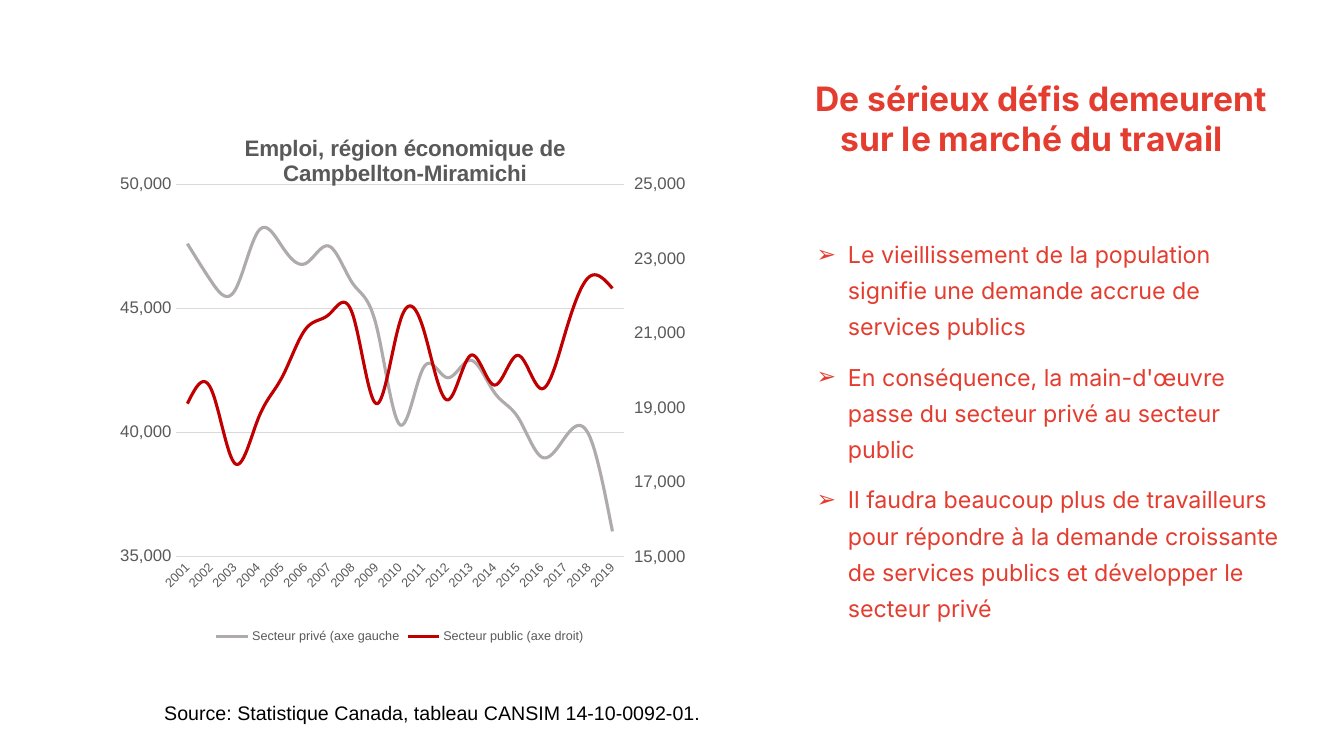
import copy
import dataclasses

import lxml.etree
import pptx
import pptx.chart.axis
import pptx.chart.data
import pptx.dml.color
import pptx.enum.chart
import pptx.enum.text
import pptx.oxml
import pptx.oxml.ns
import pptx.util

Cm = pptx.util.Cm
qn = pptx.oxml.ns.qn

YEARS = [str(year) for year in range(2001, 2020)]
EMPLOYMENT = {
    "Secteur privé (axe gauche": [
        47600, 46100, 45700, 48100, 47500, 46800, 47500, 46000, 44300, 40300,
        42600, 42200, 42900, 41600, 40600, 39000, 39800, 39900, 36000],
    "Secteur public (axe droit)": [
        19100, 19500, 17500, 18700, 19800, 21100, 21500, 21500, 19100, 21300,
        21100, 19200, 20400, 19600, 20400, 19500, 21000, 22500, 22200],
}
CHALLENGES = [
    "Le vieillissement de la population signifie une demande accrue de services publics",
    "En conséquence, la main-d'œuvre passe du secteur privé au secteur public",
    "Il faudra beaucoup plus de travailleurs pour répondre à la demande "
    "croissante de services publics et développer le secteur privé",
]


@dataclasses.dataclass(frozen=True)
class Theme:
    accent: str = "E43D30"
    ink: str = "000000"
    chart_text: str = "595959"
    grid: str = "D9D9D9"
    series: tuple = ("AFABAB", "C00000")
    text_font: str = "Inter"
    chart_font: str = "Arial"
    heading: float = 24
    body: float = 16.6
    chart_title: float = 16
    source: float = 14
    axis: float = 12
    small: float = 9


def rgb(value):
    return pptx.dml.color.RGBColor.from_string(value)


def style_font(font, size, color, name, bold=False):
    font.size = pptx.util.Pt(size)
    font.color.rgb = rgb(color)
    font.name = name
    font.bold = bold


def write_text(paragraph, text, *, size, color, font, bold=False, margin=0,
               hanging=0, bullet=None, before=0, spacing=None):
    paragraph.alignment = pptx.enum.text.PP_ALIGN.LEFT
    paragraph.space_before = pptx.util.Pt(before)
    if spacing:
        paragraph.line_spacing = spacing
    properties = paragraph._p.get_or_add_pPr()
    properties.set("marL", str(Cm(margin)))
    properties.set("indent", str(-Cm(hanging)))
    if bullet:
        bullet_color = lxml.etree.SubElement(properties, qn("a:buClr"))
        lxml.etree.SubElement(bullet_color, qn("a:srgbClr")).set("val", color)
        lxml.etree.SubElement(properties, qn("a:buFont")).set("typeface", "Arial")
        lxml.etree.SubElement(properties, qn("a:buChar")).set("char", bullet)
    run = paragraph.add_run()
    run.text = text
    style_font(run.font, size, color, font, bold)


def set_layout(parent, index, **places):
    for old in parent.findall(qn("c:layout")):
        parent.remove(old)
    layout = parent.makeelement(qn("c:layout"))
    manual = lxml.etree.SubElement(layout, qn("c:manualLayout"))
    for tag, value in places.items():
        lxml.etree.SubElement(manual, qn("c:" + tag)).set("val", str(value))
    parent.insert(index, layout)


class EmploymentSlide:
    def __init__(self, deck, theme):
        self.theme = theme
        self.slide = deck.slides.add_slide(deck.slide_layouts[5])

    def prepare_frame(self, shape, fit=pptx.enum.text.MSO_AUTO_SIZE.NONE):
        frame = shape.text_frame
        frame.word_wrap = True
        frame.auto_size = fit
        frame.vertical_anchor = pptx.enum.text.MSO_ANCHOR.TOP
        return frame

    def heading(self, text, left, top, width, height):
        title = self.slide.shapes.title
        title.left, title.top, title.width, title.height = map(Cm, (left, top, width, height))
        write_text(self.prepare_frame(title).paragraphs[0], text, bold=True,
                   size=self.theme.heading, color=self.theme.accent,
                   font=self.theme.text_font, margin=1.27, hanging=0.64)

    def bullets(self, points, left, top, width, height):
        box = self.slide.shapes.add_textbox(*map(Cm, (left, top, width, height)))
        frame = self.prepare_frame(box)
        for position, point in enumerate(points):
            paragraph = frame.add_paragraph() if position else frame.paragraphs[0]
            write_text(paragraph, point, size=self.theme.body,
                       color=self.theme.accent, font=self.theme.text_font,
                       margin=1.43, hanging=0.79, bullet="➢",
                       before=10 if position else 0, spacing=1.3)

    def source(self, text, left, top, width, height):
        box = self.slide.shapes.add_textbox(*map(Cm, (left, top, width, height)))
        frame = self.prepare_frame(box, pptx.enum.text.MSO_AUTO_SIZE.SHAPE_TO_FIT_TEXT)
        write_text(frame.paragraphs[0], text, size=self.theme.source,
                   color=self.theme.ink, font=self.theme.chart_font)

    def chart(self, title, years, employment, left, top, width, height):
        theme = self.theme
        data = pptx.chart.data.CategoryChartData(number_format="#,##0")
        data.categories = years
        for name, values in employment.items():
            data.add_series(name, values)
        chart = self.slide.shapes.add_chart(
            pptx.enum.chart.XL_CHART_TYPE.LINE,
            *map(Cm, (left, top, width, height)), data).chart
        style_font(chart.font, 10, theme.ink, theme.chart_font)

        chart.has_title = True
        write_text(chart.chart_title.text_frame.paragraphs[0], title, bold=True,
                   size=theme.chart_title, color=theme.chart_text, font=theme.chart_font)
        chart.chart_title.text_frame.paragraphs[0].alignment = pptx.enum.text.PP_ALIGN.CENTER
        set_layout(chart.chart_title._element, 1, xMode="edge", yMode="edge", x=0.23, y=0.04)
        chart.has_legend = True
        chart.legend.position = pptx.enum.chart.XL_LEGEND_POSITION.BOTTOM
        chart.legend.include_in_layout = False
        style_font(chart.legend.font, theme.small, theme.chart_text, theme.chart_font)

        for series, color in zip(chart.plots[0].series, theme.series):
            series.smooth = True
            series.marker.style = pptx.enum.chart.XL_MARKER_STYLE.NONE
            series.format.line.color.rgb = rgb(color)
            series.format.line.width = pptx.util.Pt(2.25)
        chart.plots[0].vary_by_categories = False
        self.axes(chart)
        self.right_axis(chart)
        set_layout(chart._chartSpace.chart.plotArea, 0, layoutTarget="inner",
                   xMode="edge", yMode="edge", x=0.12, y=0.14, w=0.76, h=0.69)

    def axes(self, chart):
        theme = self.theme
        year_axis, left_axis = chart.category_axis, chart.value_axis
        for axis, size in ((year_axis, theme.small), (left_axis, theme.axis)):
            axis.major_tick_mark = pptx.enum.chart.XL_TICK_MARK.NONE
            style_font(axis.tick_labels.font, size, theme.chart_text, theme.chart_font)
        year_axis._element.find(qn("c:txPr")).find(qn("a:bodyPr")).set("rot", "-2700000")
        left_axis.tick_labels.number_format = "#,##0"
        left_axis.tick_labels.number_format_is_linked = False
        left_axis.format.line.fill.background()
        self.scale(left_axis, 35000, 50000, 5000)
        left_axis.has_major_gridlines = True
        for line in (year_axis.format.line, left_axis.major_gridlines.format.line):
            line.color.rgb = rgb(theme.grid)
            line.width = pptx.util.Pt(0.75)

    def scale(self, axis, low, high, step):
        axis.minimum_scale, axis.maximum_scale, axis.major_unit = low, high, step

    def right_axis(self, chart):
        left_plot = chart.plots[0]._element
        right_plot = copy.deepcopy(left_plot)
        left_plot.remove(left_plot.findall(qn("c:ser"))[1])
        right_plot.remove(right_plot.findall(qn("c:ser"))[0])
        left_plot.addnext(right_plot)

        left_values = chart.value_axis._element
        right_values = copy.deepcopy(left_values)
        right_years = copy.deepcopy(chart.category_axis._element)
        left_values.addnext(right_values)
        right_values.addnext(right_years)
        year_id, value_id = "50010", "50020"
        for reference, number in zip(right_plot.findall(qn("c:axId")), (year_id, value_id)):
            reference.set("val", number)
        for element, own, other in ((right_years, year_id, value_id),
                                    (right_values, value_id, year_id)):
            element.find(qn("c:axId")).set("val", own)
            element.find(qn("c:crossAx")).set("val", other)
        right_values.find(qn("c:axPos")).set("val", "r")
        right_values.find(qn("c:crosses")).set("val", "max")
        pptx.chart.axis.CategoryAxis(right_years).visible = False
        axis = pptx.chart.axis.ValueAxis(right_values)
        axis.has_major_gridlines = False
        axis.major_tick_mark = pptx.enum.chart.XL_TICK_MARK.OUTSIDE
        self.scale(axis, 15000, 25000, 2000)


def main():
    deck = pptx.Presentation()
    deck.slide_width, deck.slide_height = Cm(33.87), Cm(19.05)
    page = EmploymentSlide(deck, Theme())
    page.heading("De sérieux défis demeurent sur le marché du travail", 19.66, 1.83, 12.93, 3.3)
    page.bullets(CHALLENGES, 19.69, 5.72, 12.93, 11)
    page.chart("Emploi, région économique de Campbellton-Miramichi", YEARS, EMPLOYMENT,
               2.64, 2.74, 14.88, 13.59)
    page.source("Source: Statistique Canada, tableau CANSIM 14-10-0092-01.", 3.89, 17.53, 22.78, 0.86)
    deck.save("out.pptx")


if __name__ == "__main__":
    main()
